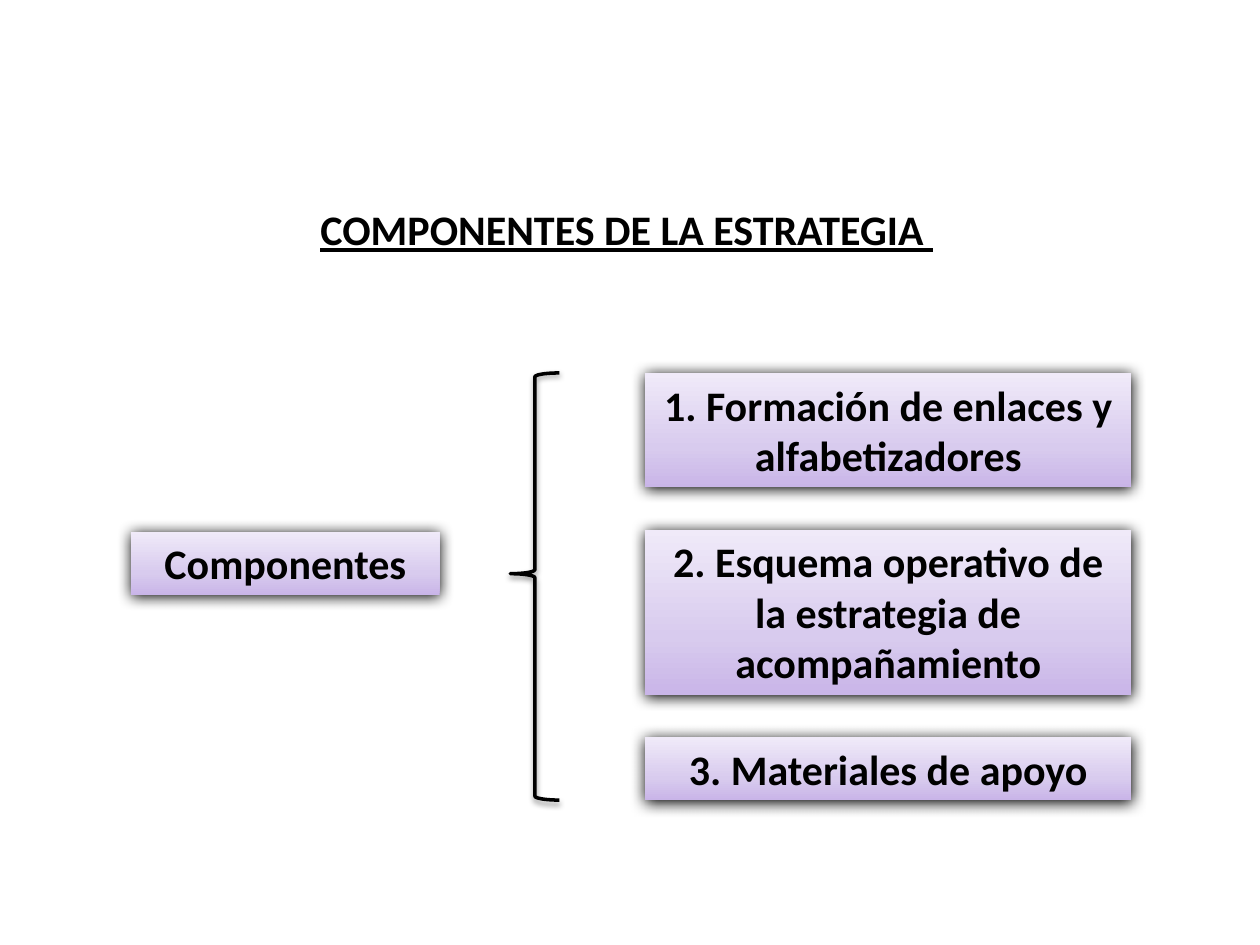
import copy

import lxml.etree
import pptx
import pptx.dml.color
import pptx.enum.shapes
import pptx.enum.text
import pptx.oxml.ns
import pptx.util

RGBColor = pptx.dml.color.RGBColor
SHAPE = pptx.enum.shapes.MSO_SHAPE
qn = pptx.oxml.ns.qn

BLACK = RGBColor(0x00, 0x00, 0x00)
LILAC_STOPS = [
    (0, RGBColor(0xC9, 0xB5, 0xE8)),
    (0.35, RGBColor(0xD8, 0xCB, 0xEE)),
    (1, RGBColor(0xF0, 0xEA, 0xF9)),
]

prs = pptx.Presentation()
prs.slide_width = pptx.util.Inches(10)
prs.slide_height = pptx.util.Inches(7.5)
s = prs.slides.add_slide(prs.slide_layouts[6])

# Grid of 100 columns by 75 rows
COL = prs.slide_width / 100
ROW = prs.slide_height / 75


def add_shadow(effects, blur, dist, alpha):
    """Put a black downward shadow (points, percent) in an a:effectLst."""
    shadow = lxml.etree.SubElement(
        effects, qn("a:outerShdw"), blurRad=str(pptx.util.Pt(blur)),
        dist=str(pptx.util.Pt(dist)), dir="5400000", rotWithShape="0")
    color = lxml.etree.SubElement(shadow, qn("a:srgbClr"), val=str(BLACK))
    lxml.etree.SubElement(color, qn("a:alpha"), val=str(alpha * 1000))


def add_text(text, left, top, width, height, boxed=True, underline=False):
    """Add bold centred text, in a shaded box or with a shadow of its own."""
    at = [int(v) for v in (left * COL, top * ROW, width * COL, height * ROW)]
    if boxed:
        sp = s.shapes.add_shape(SHAPE.RECTANGLE, *at)
        sp.line.fill.background()
        sp.shadow.inherit = False
        add_shadow(sp._element.spPr.find(qn("a:effectLst")), 8.5, 1, 100)
        sp.fill.gradient()
        sp.fill.gradient_angle = 90
        stops = sp._element.spPr.find(qn("a:gradFill")).find(qn("a:gsLst"))
        stops.append(copy.deepcopy(stops[0]))
        for stop, (position, color) in zip(sp.fill.gradient_stops, LILAC_STOPS):
            stop.position = position
            stop.color.rgb = color
    else:
        sp = s.shapes.add_textbox(*at)
    tf = sp.text_frame
    tf.word_wrap = True
    tf.auto_size = pptx.enum.text.MSO_AUTO_SIZE.SHAPE_TO_FIT_TEXT
    tf.vertical_anchor = pptx.enum.text.MSO_ANCHOR.TOP
    p = tf.paragraphs[0]
    p.alignment = pptx.enum.text.PP_ALIGN.CENTER
    r = p.add_run()
    r.text = text
    r.font.name = "Calibri"
    r.font.size = pptx.util.Pt(24)
    r.font.bold = True
    r.font.underline = underline
    r.font.color.rgb = BLACK
    if not boxed:
        effects = lxml.etree.Element(qn("a:effectLst"))
        add_shadow(effects, 3, 3, 40)
        r._r.rPr.find(qn("a:solidFill")).addnext(effects)


add_text("COMPONENTES DE LA ESTRATEGIA ", 9.6, 15.7, 80.3, 5,
         boxed=False, underline=True)
add_text("Componentes", 10.4, 42.2, 24.5, 5)

# Stacked boxes: height follows the number of text lines, gaps are equal
GAP = 3.35
top = 29.6
for text, lines in [
    ("1. Formación de enlaces y alfabetizadores", 2),
    ("2. Esquema operativo de la estrategia de acompañamiento", 3),
    ("3. Materiales de apoyo", 1),
]:
    height = 1 + 4.04 * lines
    add_text(text, 51.2, top, 38.6, height)
    top += height + GAP

brace = s.shapes.add_shape(
    SHAPE.LEFT_BRACE, int(40.5 * COL), int(29.6 * ROW),
    int(3.9 * COL), int(33.9 * ROW))
brace.adjustments[0] = 0.08
brace.adjustments[1] = 0.47
brace.fill.background()
brace.line.color.rgb = BLACK
brace.line.width = pptx.util.Pt(2)
brace.shadow.inherit = False
add_shadow(brace._element.spPr.find(qn("a:effectLst")), 3.1, 1.6, 38)

prs.save("out.pptx")
